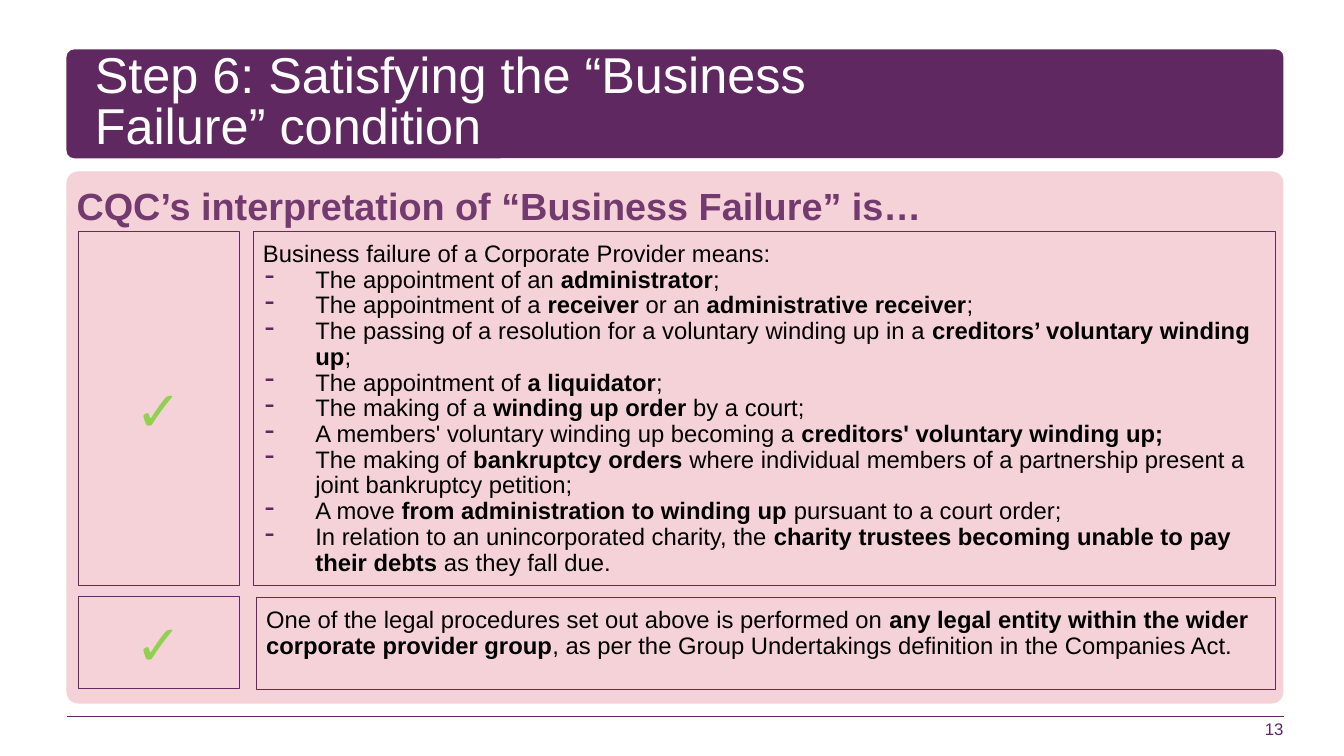
"""Build the slide on satisfying the business failure condition."""
from lxml import etree
from pptx import Presentation
from pptx.dml.color import RGBColor
from pptx.enum.shapes import MSO_CONNECTOR, MSO_SHAPE
from pptx.enum.text import MSO_ANCHOR, PP_ALIGN
from pptx.oxml.ns import qn
from pptx.util import Inches, Pt

RECTANGLE, ROUNDED = MSO_SHAPE.RECTANGLE, MSO_SHAPE.ROUNDED_RECTANGLE
TOP, MIDDLE, BOTTOM = MSO_ANCHOR.TOP, MSO_ANCHOR.MIDDLE, MSO_ANCHOR.BOTTOM
LEFT, CENTER, RIGHT = PP_ALIGN.LEFT, PP_ALIGN.CENTER, PP_ALIGN.RIGHT

TITLE = "Step 6: Satisfying the “Business Failure” condition"
HEADING = "**CQC’s interpretation of “Business Failure” is…**"
PAGE_NUMBER = "13"
TICK = "**✓**"
DEFINITION = [
    "Business failure of a Corporate Provider means:",
    "The appointment of an **administrator**;",
    "The appointment of a **receiver** or an **administrative receiver**;",
    "The passing of a resolution for a voluntary winding up in a **creditors’ voluntary winding up**;",
    "The appointment of **a liquidator**;",
    "The making of a **winding up order **by a court;",
    "A members' voluntary winding up becoming a **creditors' voluntary winding up;**",
    "The making of **bankruptcy orders **where individual members of a partnership present a joint bankruptcy petition;",
    "A move **from administration to winding up **pursuant to a court order;",
    "In relation to an unincorporated charity, the **charity trustees becoming unable to pay their debts **as they fall due.",
]
GROUP_RULE = [
    "One of the legal procedures set out above is performed on **any legal entity within the wider "
    "corporate provider group**, as per the Group Undertakings definition in the Companies Act."
]
PURPLE, BORDER, PINK = "5F2861", "672861", "EFBBC3"
HEADING_PURPLE, GREEN, WHITE, BLACK = "733A70", "92D050", "FFFFFF", "000000"
PANEL_LEFT, PANEL_RIGHT = 0.66, 12.73
TICK_LEFT, TICK_WIDTH, TEXT_RIGHT = 0.78, 1.59, 12.65
ROWS = [
    {"top": 2.3, "text_top": 2.3, "height": 3.51, "text_left": 2.51, "lines": DEFINITION},
    {"top": 5.92, "text_top": 5.93, "height": 0.91, "text_left": 2.54, "lines": GROUP_RULE},
]


def color(value):
    return RGBColor.from_string(value)


def add_box(slide, kind, left, top, width, height, fill=None, line=None, weight=0.5):
    shape = slide.shapes.add_shape(kind, Inches(left), Inches(top), Inches(width), Inches(height))
    shape.shadow.inherit = False
    if fill:
        shape.fill.solid()
        shape.fill.fore_color.rgb = color(fill)
    else:
        shape.fill.background()
    if line:
        shape.line.color.rgb = color(line)
        shape.line.width = Pt(weight)
    else:
        shape.line.fill.background()
    return shape


def add_bullet(paragraph):
    properties = paragraph._p.get_or_add_pPr()
    properties.set("marL", str(Inches(0.52)))
    properties.set("indent", str(Inches(-0.5)))
    bullet_color = etree.SubElement(properties, qn("a:buClr"))
    etree.SubElement(bullet_color, qn("a:srgbClr"), val=PURPLE)
    etree.SubElement(properties, qn("a:buSzPct"), val="120000")
    etree.SubElement(properties, qn("a:buChar"), char="-")


def write(shape, lines, size, text_color, anchor=TOP, align=LEFT, margin=0, spacing=1.0):
    """Write lines into a shape; ** switches bold, and lines after the first get a dash."""
    frame = shape.text_frame
    frame.word_wrap = True
    frame.vertical_anchor = anchor
    frame.margin_left = frame.margin_right = Inches(margin)
    frame.margin_top = frame.margin_bottom = Inches(margin)
    for index, line in enumerate(lines):
        paragraph = frame.add_paragraph() if index else frame.paragraphs[0]
        if index:
            add_bullet(paragraph)
        paragraph.alignment = align
        paragraph.line_spacing = spacing
        for part, text in enumerate(line.split("**")):
            if text:
                run = paragraph.add_run()
                run.text = text
                run.font.name = "Arial"
                run.font.size = Pt(size)
                run.font.bold = part % 2 == 1
                run.font.color.rgb = color(text_color)


def add_label(slide, left, top, width, height, text, size, text_color, **layout):
    label = slide.shapes.add_textbox(Inches(left), Inches(top), Inches(width), Inches(height))
    write(label, [text], size, text_color, **layout)


def main():
    presentation = Presentation()
    presentation.slide_width, presentation.slide_height = Inches(13.33), Inches(7.5)
    slide = presentation.slides.add_slide(presentation.slide_layouts[6])

    panel_width = PANEL_RIGHT - PANEL_LEFT
    banner = add_box(slide, ROUNDED, PANEL_LEFT, 0.49, panel_width, 1.08, PURPLE)
    banner.adjustments[0] = 0.072
    rule = slide.shapes.add_connector(
        MSO_CONNECTOR.STRAIGHT, Inches(PANEL_RIGHT), Inches(7.11), Inches(PANEL_LEFT), Inches(7.11))
    rule.line.color.rgb = color(PURPLE)
    rule.line.width = Pt(1)
    etree.SubElement(rule._element.spPr, qn("a:effectLst"))
    panel = add_box(slide, ROUNDED, PANEL_LEFT, 1.7, panel_width, 5.28, PINK)
    panel.adjustments[0] = 0.022
    panel_color = panel._element.spPr.find(qn("a:solidFill"))[0]
    etree.SubElement(panel_color, qn("a:alpha"), val="66000")

    add_label(slide, 0.94, 0.53, 8.13, 0.99, TITLE, 36, WHITE, anchor=MIDDLE, spacing=0.85)
    add_label(slide, 9.95, 6.83, 2.78, 0.5, PAGE_NUMBER, 12, PURPLE, anchor=BOTTOM, align=RIGHT)
    add_label(slide, 0.76, 1.81, 11.47, 0.45, HEADING, 27, HEADING_PURPLE)

    for row in ROWS:
        tick_box = add_box(slide, RECTANGLE, TICK_LEFT, row["top"], TICK_WIDTH, row["height"], line=BORDER)
        write(tick_box, [TICK], 40, GREEN, anchor=MIDDLE, align=CENTER, margin=0.08)
        text_box = add_box(slide, RECTANGLE, row["text_left"], row["text_top"],
                           TEXT_RIGHT - row["text_left"], row["height"], line=BORDER, weight=0.75)
        write(text_box, row["lines"], 17, BLACK, margin=0.1, spacing=0.9)

    presentation.save("out.pptx")


if __name__ == "__main__":
    main()
